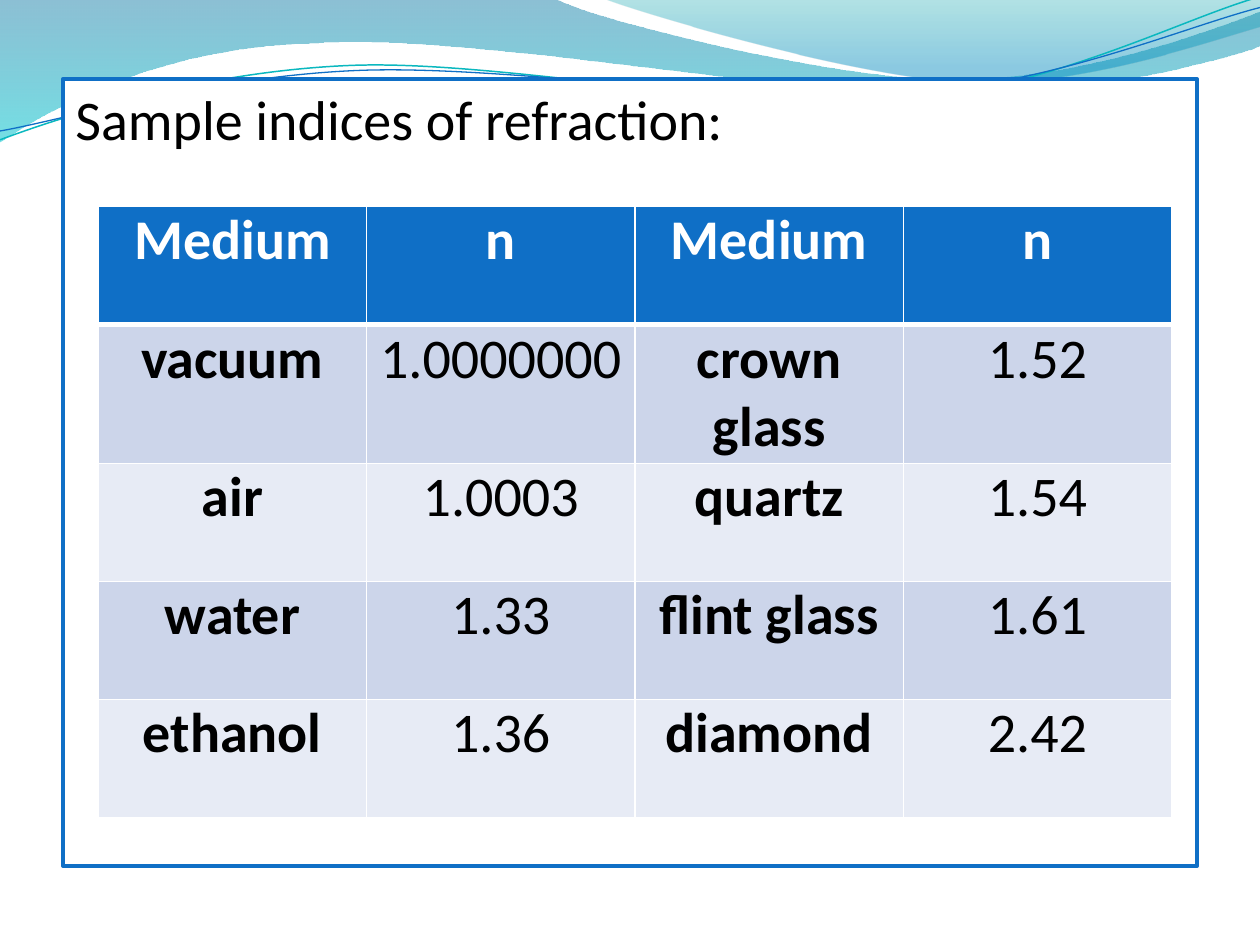
import math

from lxml import etree
from pptx import Presentation
from pptx import util as u
from pptx.dml.color import RGBColor
from pptx.enum import shapes, text
from pptx.oxml.ns import qn

COLORS = {
    "white": "FFFFFF", "black": "000000", "blue": "0F6FC6", "turquoise": "0AB8BF",
    "band_dark": "CCD5EA", "band_light": "E7EBF5",
    "wave_top": "0074A1", "wave_bottom": "00C6CF",
    "crest_top": "00A1A9", "crest_bottom": "008BBF",
}
FONT = "Calibri"
TEXT_SIZE = 32
UNIT = u.Inches(1)
COLUMNS, ROWS = 10, 7.5
TILT = -2.7

WAVES = [
    {
        "start": (0, 0),
        "segments": [
            (4.4, -0.01),
            (4.76, 0.17, 6.64, 0.63, 7.58, 0.63), (8.53, 0.63, 9.58, 0.26, 10, 0.09),
            (10.01, 0.36),
            (9.83, 0.44, 8.7, 0.76, 7.46, 0.75), (6.22, 0.75, 3.82, 0.28, 2.57, 0.34),
            (1.29, 0.36, 0.46, 0.83, -0.01, 1.13), (0, 0),
        ],
        "stops": [(0, "wave_top", 45), (1, "wave_bottom", 55)],
    },
    {
        "start": (4.79, -0.01),
        "segments": [
            (5.09, 0.11, 6.82, 0.62, 7.69, 0.65), (8.56, 0.69, 9.61, 0.32, 10, 0.21),
            (10, 0), (4.79, -0.01),
        ],
        "stops": [(0, "crest_top", 30), (0.8, "crest_bottom", 45)],
    },
    {
        "start": (0, 1.11),
        "segments": [
            (0.48, 0.93, 1.58, 0.57, 2.77, 0.52), (3.95, 0.47, 5.93, 0.89, 7.13, 0.8),
            (8.33, 0.71, 9.38, 0.15, 9.98, -0.02),
        ],
        "line": ("turquoise", 0.85),
        "center": (4.99, 0.57),
    },
    {
        "start": (0, 1.04),
        "segments": [
            (0.47, 0.96, 1.64, 0.61, 2.83, 0.56), (4.03, 0.51, 5.97, 0.84, 7.17, 0.75),
            (8.36, 0.67, 9.41, 0.21, 10, 0.06),
        ],
        "line": ("blue", 0.75),
        "center": (5, 0.59),
    },
]

REFRACTION = [
    ["Medium", "n", "Medium", "n"],
    ["vacuum", "1.0000000", "crown glass", "1.52"],
    ["air", "1.0003", "quartz", "1.54"],
    ["water", "1.33", "flint glass", "1.61"],
    ["ethanol", "1.36", "diamond", "2.42"],
]


def color(name):
    return RGBColor.from_string(COLORS[name])


def grid(*values):
    return [round(value * UNIT) for value in values]


def level(point, center):
    if center is None:
        return point
    angle = math.radians(-TILT)
    x, y = point[0] - center[0], point[1] - center[1]
    return (center[0] + x * math.cos(angle) - y * math.sin(angle),
            center[1] + x * math.sin(angle) + y * math.cos(angle))


def bend(shape, segments):
    lines = list(shape._element.spPr.iter(qn("a:lnTo")))
    for line, points in zip(lines, segments):
        if len(points) == 1:
            continue
        curve = etree.Element(qn("a:cubicBezTo"))
        for x, y in points:
            etree.SubElement(
                curve, qn("a:pt"), x=str(x - shape.left), y=str(y - shape.top))
        line.getparent().replace(line, curve)


def fill_gradient(shape, stops):
    shape.fill.gradient()
    shape.fill.gradient_angle = 270
    for stop, (position, name, opacity) in zip(shape.fill.gradient_stops, stops):
        stop.position = position
        stop.color.rgb = color(name)
    color_elements = list(shape._element.spPr.iter(qn("a:srgbClr")))
    for element, (position, name, opacity) in zip(color_elements, stops):
        etree.SubElement(element, qn("a:alpha"), val=str(opacity * 1000))


def add_wave(slide, left, top, wave):
    center = wave.get("center")
    segments = []
    for values in [wave["start"], *wave["segments"]]:
        points = [level(point, center) for point in zip(values[::2], values[1::2])]
        segments.append([grid(left + x, top + y) for x, y in points])
    start, *segments = segments
    builder = slide.shapes.build_freeform(*start[0])
    builder.add_line_segments([points[-1] for points in segments], close="stops" in wave)
    shape = builder.convert_to_shape()
    bend(shape, segments)
    shape.shadow.inherit = False
    if "stops" in wave:
        fill_gradient(shape, wave["stops"])
        shape.line.fill.background()
    else:
        name, width = wave["line"]
        shape.rotation = TILT
        shape.fill.background()
        shape.line.color.rgb = color(name)
        shape.line.width = u.Pt(width)


def format_text(paragraph, name, bold=False):
    for run in paragraph.runs:
        run.font.name = FONT
        run.font.size = u.Pt(TEXT_SIZE)
        run.font.bold = bold
        run.font.color.rgb = color(name)


def add_panel(slide, left, top, width, height):
    panel = slide.shapes.add_shape(
        shapes.MSO_SHAPE.RECTANGLE, *grid(left, top, width, height))
    panel.shadow.inherit = False
    panel.fill.solid()
    panel.fill.fore_color.rgb = color("white")
    panel.line.color.rgb = color("blue")
    panel.line.width = u.Pt(2)
    frame = panel.text_frame
    frame.word_wrap = True
    frame.vertical_anchor = text.MSO_ANCHOR.TOP
    frame.text = "Sample indices of refraction:"
    frame.paragraphs[0].alignment = text.PP_ALIGN.LEFT
    format_text(frame.paragraphs[0], "black")


def add_border(cell, side, width):
    line = etree.SubElement(
        cell._tc.get_or_add_tcPr(), qn(f"a:ln{side}"), w=str(u.Pt(width)))
    fill = etree.SubElement(line, qn("a:solidFill"))
    etree.SubElement(fill, qn("a:srgbClr"), val=COLORS["white"])


def format_cell(cell, row, column):
    header = row == 0
    widths = {"L": 1, "R": 1, "T": 3 if row == 1 else 1, "B": 3 if header else 1}
    for side, width in widths.items():
        add_border(cell, side, width)
    cell.fill.solid()
    band = "band_dark" if row % 2 else "band_light"
    cell.fill.fore_color.rgb = color("blue" if header else band)
    cell.margin_left = cell.margin_right = u.Inches(0.07)
    cell.margin_top = cell.margin_bottom = 0
    paragraph = cell.text_frame.paragraphs[0]
    paragraph.alignment = text.PP_ALIGN.CENTER
    format_text(paragraph, "white" if header else "black", header or column % 2 == 0)


def add_refraction_table(slide, left, top, width, height, tall_row=1, tall_height=1.1):
    row_count, column_count = len(REFRACTION), len(REFRACTION[0])
    table = slide.shapes.add_table(
        row_count, column_count, *grid(left, top, width, height)).table
    plain_height = (height - tall_height) / (row_count - 1)
    for row, values in enumerate(REFRACTION):
        table.rows[row].height = grid(tall_height if row == tall_row else plain_height)[0]
        for column, value in enumerate(values):
            cell = table.cell(row, column)
            cell.text = value
            format_cell(cell, row, column)


def main():
    presentation = Presentation()
    presentation.slide_width, presentation.slide_height = grid(COLUMNS, ROWS)
    slide = presentation.slides.add_slide(presentation.slide_layouts[6])
    for wave in WAVES:
        add_wave(slide, 0, 0, wave)
    add_panel(slide, COLUMNS / 20, ROWS / 12, COLUMNS * 0.9, ROWS / 1.2)
    add_refraction_table(slide, 0.78, 1.64, 8.52, 4.85)
    presentation.save("out.pptx")


if __name__ == "__main__":
    main()
